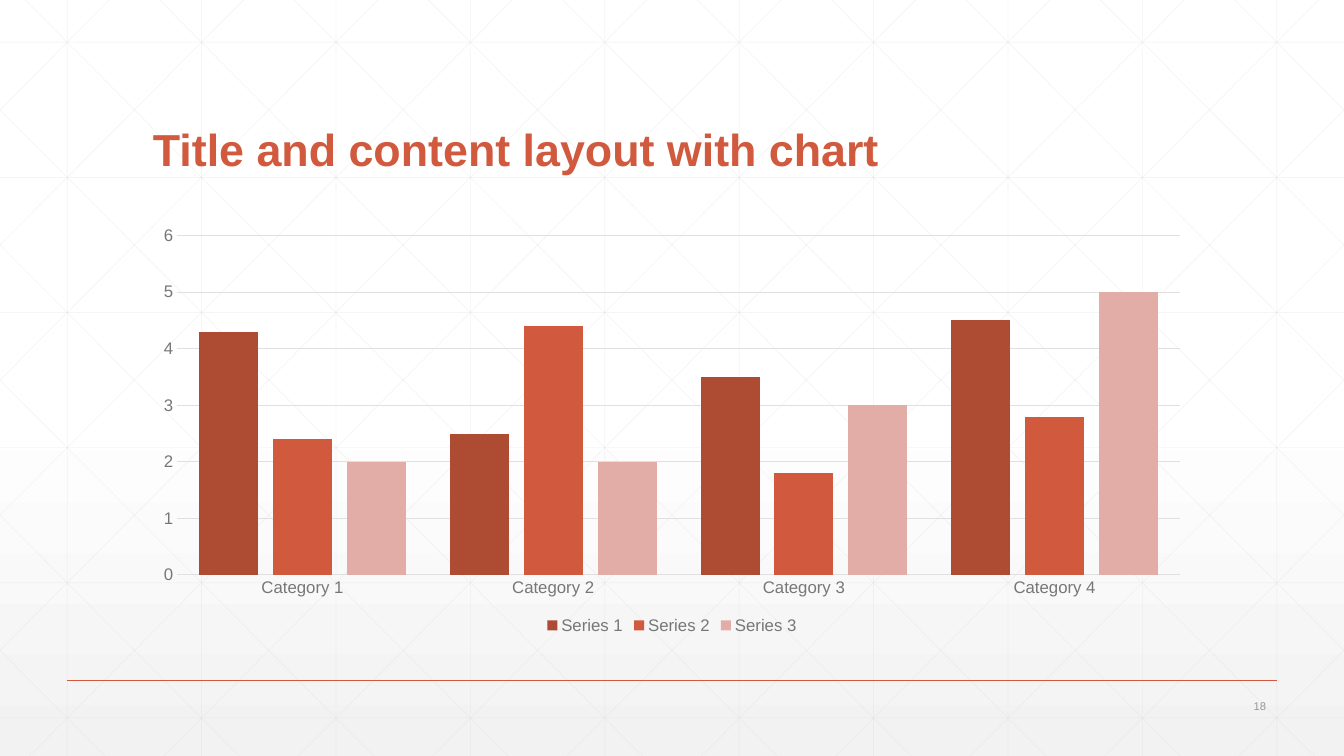
from dataclasses import dataclass

from pptx import Presentation
from pptx.chart.data import CategoryChartData
from pptx.dml.color import RGBColor
from pptx.enum.chart import XL_CHART_TYPE, XL_LEGEND_POSITION, XL_TICK_MARK
from pptx.enum.shapes import MSO_CONNECTOR
from pptx.enum.text import MSO_ANCHOR, MSO_AUTO_SIZE, PP_ALIGN
from pptx.oxml import parse_xml
from pptx.oxml.ns import nsdecls
from pptx.oxml.xmlchemy import OxmlElement
from pptx.util import Pt


@dataclass(frozen=True)
class Theme:
    font: str = "Arial"
    accent: str = "D15A3E"
    pattern: str = "D9D9D9"
    pattern_opacity: int = 25
    background_top: str = "FFFFFF"
    background_bottom: str = "F2F2F2"
    chart_text: str = "2D2E2D"
    axis_text: str = "767876"
    grid: str = "DFE0DF"
    number: str = "959795"
    series: tuple = ("AD4B33", "D15A3E", "E2ADA6")
    title_size: int = 32
    axis_size: int = 12
    chart_size: int = 10
    number_size: int = 8


THEME = Theme()
WIDTH, HEIGHT = 960, 540
PITCH = 96
DIAGONAL_START = 18
DIAGONAL_RUN = 537

CATEGORIES = ("Category 1", "Category 2", "Category 3", "Category 4")
SERIES = {
    "Series 1": (4.3, 2.5, 3.5, 4.5),
    "Series 2": (2.4, 4.4, 1.8, 2.8),
    "Series 3": (2, 2, 3, 5),
}


def style_font(font, size, color, bold=False):
    font.name = THEME.font
    font.size = Pt(size)
    font.bold = bold
    font.color.rgb = RGBColor.from_string(color)


def style_line(line, color, width):
    line.color.rgb = RGBColor.from_string(color)
    line.width = Pt(width)


def paint_background(slide):
    stops = ((0, THEME.background_top), (53, THEME.background_top), (100, THEME.background_bottom))
    stop_xml = "".join(
        f'<a:gs pos="{position * 1000}"><a:srgbClr val="{color}"/></a:gs>'
        for position, color in stops
    )
    background = parse_xml(
        f'<p:bg {nsdecls("p", "a")}><p:bgPr><a:gradFill rotWithShape="1">'
        f'<a:gsLst>{stop_xml}</a:gsLst><a:lin ang="5400000" scaled="0"/>'
        "</a:gradFill><a:effectLst/></p:bgPr></p:bg>"
    )
    slide.element.cSld.insert(0, background)


def add_line(slide, start, end, color, width, opacity=100):
    connector = slide.shapes.add_connector(
        MSO_CONNECTOR.STRAIGHT, *(Pt(length) for length in (*start, *end))
    )
    style_line(connector.line, color, width)
    properties = connector.element.spPr
    if opacity < 100:
        alpha = OxmlElement("a:alpha")
        alpha.set("val", str(opacity * 1000))
        properties.xpath("a:ln/a:solidFill/a:srgbClr")[0].append(alpha)
    properties.append(OxmlElement("a:effectLst"))


def pattern_lines():
    for column in range(10):
        x = 48 + column * PITCH
        yield (x, 0), (x, HEIGHT)
    for row in range(6):
        y = 30.24 + row * 96.5
        yield (0, y), (WIDTH, y)
    slope = HEIGHT / DIAGONAL_RUN
    for step in range(-5, 10):
        origin = DIAGONAL_START + step * PITCH
        left = max(origin, 0)
        right = min(origin + DIAGONAL_RUN, WIDTH)
        top, bottom = (left - origin) * slope, (right - origin) * slope
        yield (left, top), (right, bottom)
        yield (WIDTH - left, top), (WIDTH - right, bottom)


def add_pattern(slide):
    for start, end in pattern_lines():
        add_line(slide, start, end, THEME.pattern, 0.5, THEME.pattern_opacity)


def place_title(slide, text):
    title = slide.shapes.title
    title.element.getparent().append(title.element)
    title.left, title.top, title.width, title.height = Pt(102), Pt(39.6), Pt(756), Pt(90)
    frame = title.text_frame
    frame.text = text
    frame.word_wrap = True
    frame.auto_size = MSO_AUTO_SIZE.NONE
    frame.vertical_anchor = MSO_ANCHOR.BOTTOM
    paragraph = frame.paragraphs[0]
    paragraph.alignment = PP_ALIGN.LEFT
    paragraph.line_spacing = 0.9
    style_font(paragraph.runs[0].font, THEME.title_size, THEME.accent, bold=True)


def style_axes(chart):
    for axis in (chart.category_axis, chart.value_axis):
        axis.major_tick_mark = axis.minor_tick_mark = XL_TICK_MARK.NONE
        style_font(axis.tick_labels.font, THEME.axis_size, THEME.axis_text)
    style_line(chart.category_axis.format.line, THEME.grid, 0.75)
    values = chart.value_axis
    values.minimum_scale, values.maximum_scale, values.major_unit = 0, 6, 1
    values.format.line.fill.background()
    values.has_major_gridlines = True
    style_line(values.major_gridlines.format.line, THEME.grid, 0.75)


def add_column_chart(slide):
    data = CategoryChartData()
    data.categories = CATEGORIES
    for name, values in SERIES.items():
        data.add_series(name, values)
    chart = slide.shapes.add_chart(
        XL_CHART_TYPE.COLUMN_CLUSTERED, Pt(102), Pt(156), Pt(756), Pt(300), data
    ).chart
    style_font(chart.font, THEME.chart_size, THEME.chart_text)
    chart.has_title = False
    chart.has_legend = True
    chart.legend.position = XL_LEGEND_POSITION.BOTTOM
    chart.legend.include_in_layout = False
    style_font(chart.legend.font, THEME.axis_size, THEME.axis_text)
    style_axes(chart)
    plot = chart.plots[0]
    plot.gap_width = 75
    plot.overlap = -25
    plot.vary_by_categories = False
    for series, color in zip(plot.series, THEME.series):
        series.invert_if_negative = False
        series.format.fill.solid()
        series.format.fill.fore_color.rgb = RGBColor.from_string(color)


def add_slide_number(slide, text):
    box = slide.shapes.add_textbox(Pt(839.5), Pt(495.5), Pt(72), Pt(17.3))
    frame = box.text_frame
    frame.text = text
    frame.word_wrap = True
    frame.vertical_anchor = MSO_ANCHOR.MIDDLE
    paragraph = frame.paragraphs[0]
    paragraph.alignment = PP_ALIGN.RIGHT
    style_font(paragraph.runs[0].font, THEME.number_size, THEME.number)


def main():
    presentation = Presentation()
    presentation.slide_width, presentation.slide_height = Pt(WIDTH), Pt(HEIGHT)
    slide = presentation.slides.add_slide(presentation.slide_layouts.get_by_name("Title Only"))
    paint_background(slide)
    add_pattern(slide)
    add_line(slide, (48, 486), (912, 486), THEME.accent, 1)
    place_title(slide, "Title and content layout with chart")
    add_column_chart(slide)
    add_slide_number(slide, "18")
    presentation.save("out.pptx")


if __name__ == "__main__":
    main()
